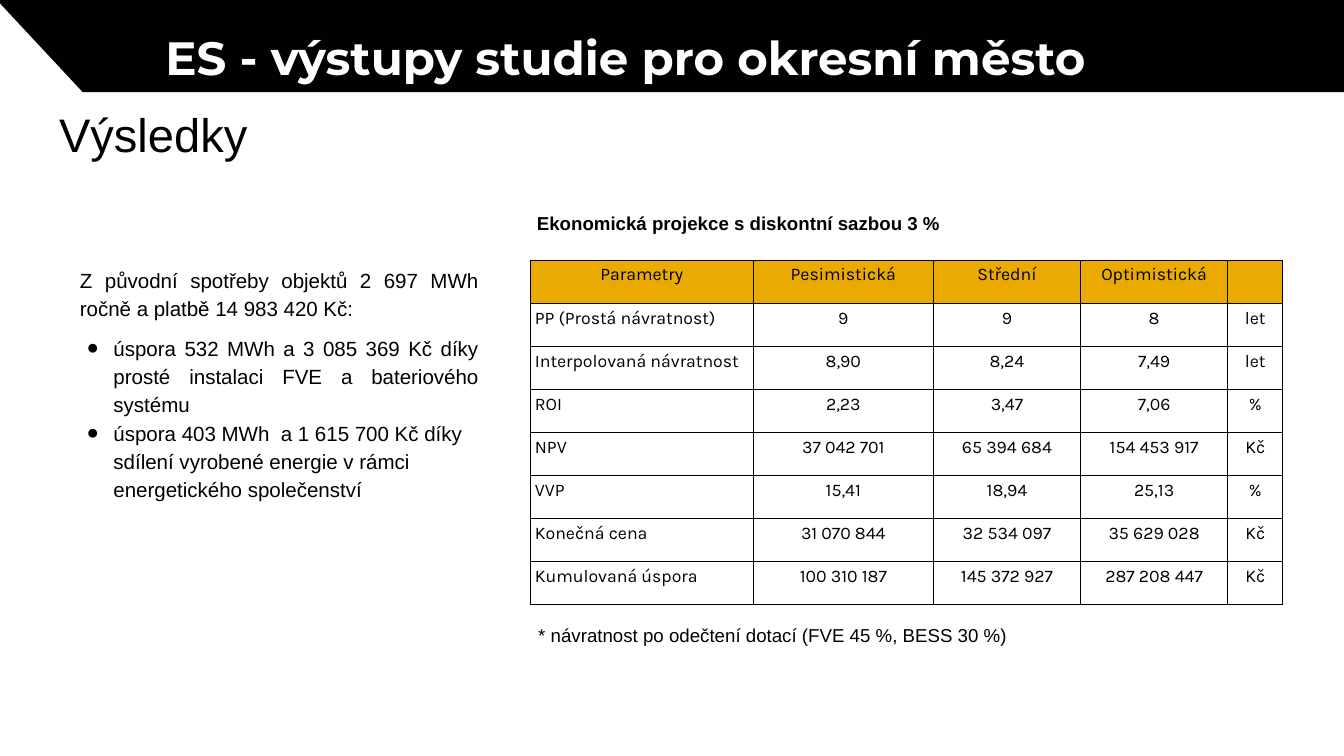
from lxml import etree
from pptx import Presentation
from pptx.dml.color import RGBColor
from pptx.enum.text import MSO_ANCHOR, MSO_AUTO_SIZE, PP_ALIGN
from pptx.oxml.ns import qn
from pptx.util import Inches, Pt

LEFT, CENTER, JUSTIFY = PP_ALIGN.LEFT, PP_ALIGN.CENTER, PP_ALIGN.JUSTIFY
TOP, MIDDLE = MSO_ANCHOR.TOP, MSO_ANCHOR.MIDDLE
NO_AUTOFIT = MSO_AUTO_SIZE.NONE
TITLE_ONLY = 5

COLORS = {"text": "000000", "banner": "010101", "light": "FFFFFF", "header": "EAAA01"}

BANNER_POINTS = [(-0.98, -1), (1.23, 1.37), (21.41, 1.37), (19.21, -1)]
COLUMN_WIDTHS = [3.32, 2.68, 2.19, 2.19, 0.82]
HEADER_HEIGHT, ROW_HEIGHT = 0.65, 0.64
PROJECTION = [
    ["Parametry", "Pesimistická", "Střední", "Optimistická", ""],
    ["PP (Prostá návratnost)", "9", "9", "8", "let"],
    ["Interpolovaná návratnost", "8,90", "8,24", "7,49", "let"],
    ["ROI", "2,23", "3,47", "7,06", "%"],
    ["NPV", "37 042 701", "65 394 684", "154 453 917", "Kč"],
    ["VVP", "15,41", "18,94", "25,13", "%"],
    ["Konečná cena", "31 070 844", "32 534 097", "35 629 028", "Kč"],
    ["Kumulovaná úspora", "100 310 187", "145 372 927", "287 208 447", "Kč"],
]
INTRO = "Z původní spotřeby objektů 2 697 MWh ročně a platbě 14 983 420 Kč:"
SOLAR_SAVING = "úspora 532 MWh a 3 085 369 Kč díky prosté instalaci FVE a bateriového systému"
SHARING_SAVING = ("úspora 403 MWh  a 1 615 700 Kč díky sdílení vyrobené energie "
                  "v rámci energetického společenství")


def apply(target, formats):
    for name, value in formats.items():
        setattr(target, name, value)


class SlideBuilder:
    def __init__(self, slide):
        self.slide = slide

    def text(self, paragraph, wording, size, font="Arial", color="text", bold=False, **formats):
        apply(paragraph, {"alignment": LEFT, **formats})
        run = paragraph.add_run()
        run.text = wording
        apply(run.font, {"size": Pt(size), "name": font, "bold": bold})
        run.font.color.rgb = RGBColor.from_string(COLORS[color])

    def frame(self, holder, inset, anchor=TOP):
        frame = holder.text_frame
        margin = Inches(inset)
        apply(frame, {"word_wrap": True, "auto_size": NO_AUTOFIT, "vertical_anchor": anchor,
                      "margin_left": margin, "margin_right": margin,
                      "margin_top": margin, "margin_bottom": margin})
        return frame

    def title(self, box, wording):
        heading = self.slide.shapes.title
        apply(heading, dict(zip(("left", "top", "width", "height"), map(Inches, box))))
        self.text(self.frame(heading, 0.2).paragraphs[0], wording, 50.4)

    def text_box(self, box, inset, anchor=TOP):
        return self.frame(self.slide.shapes.add_textbox(*map(Inches, box)), inset, anchor)

    def bullet(self, paragraph):
        properties = paragraph._p.get_or_add_pPr()
        properties.set("marL", str(Inches(0.5)))
        properties.set("indent", str(Inches(-0.4)))
        bullet_color = etree.SubElement(properties, qn("a:buClr"))
        etree.SubElement(bullet_color, qn("a:srgbClr"), val=COLORS["text"])
        etree.SubElement(properties, qn("a:buFont"), typeface="Arial")
        etree.SubElement(properties, qn("a:buChar"), char="●")

    def polygon(self, points, color):
        start, *rest = [(Inches(x), Inches(y)) for x, y in points]
        builder = self.slide.shapes.build_freeform(*start)
        builder.add_line_segments(rest, close=True)
        polygon = builder.convert_to_shape()
        polygon.shadow.inherit = False
        polygon.fill.solid()
        polygon.fill.fore_color.rgb = RGBColor.from_string(COLORS[color])
        polygon.line.fill.background()

    def borders(self, cell):
        properties = cell._tc.get_or_add_tcPr()
        for side in ("a:lnL", "a:lnR", "a:lnT", "a:lnB"):
            line = etree.SubElement(properties, qn(side), w=str(Pt(1)))
            fill = etree.SubElement(line, qn("a:solidFill"))
            etree.SubElement(fill, qn("a:srgbClr"), val=COLORS["text"])

    def table(self, left, top, rows, widths):
        height = HEADER_HEIGHT + ROW_HEIGHT * (len(rows) - 1)
        table = self.slide.shapes.add_table(
            len(rows), len(widths), Inches(left), Inches(top),
            Inches(sum(widths)), Inches(height)).table
        apply(table, {"first_row": False, "horz_banding": False})
        for column, width in zip(table.columns, widths):
            column.width = Inches(width)
        margin = Inches(0.07)
        for r, values in enumerate(rows):
            table.rows[r].height = Inches(ROW_HEIGHT if r else HEADER_HEIGHT)
            for c, value in enumerate(values):
                cell = table.cell(r, c)
                apply(cell, {"margin_left": margin, "margin_right": margin,
                             "margin_top": margin, "margin_bottom": margin})
                self.borders(cell)
                if r == 0:
                    cell.fill.solid()
                    cell.fill.fore_color.rgb = RGBColor.from_string(COLORS["header"])
                else:
                    cell.fill.background()
                if value:
                    self.text(cell.text_frame.paragraphs[0], value, 19, "Karla",
                              alignment=LEFT if r and c == 0 else CENTER)


def main():
    presentation = Presentation()
    presentation.slide_width = Inches(20)
    presentation.slide_height = Inches(11.25)
    layout = presentation.slide_layouts[TITLE_ONLY]
    builder = SlideBuilder(presentation.slides.add_slide(layout))

    footnote = builder.text_box((7.81, 9.04, 11.2, 0.84), 0.2)
    builder.text(footnote.paragraphs[0], "* návratnost po odečtení dotací (FVE 45 %, BESS 30 %)",
                 20, line_spacing=1.15)

    builder.polygon(BANNER_POINTS, "banner")
    banner = builder.text_box((2.46, 0.12, 14.86, 0.84), 0)
    builder.text(banner.paragraphs[0], "ES - výstupy studie pro okresní město", 50,
                 "Montserrat", "light", True, line_spacing=1.38)
    builder.title((0.68, 1.37, 18.64, 1.25), "Výsledky")

    builder.table(7.89, 3.87, PROJECTION, COLUMN_WIDTHS)
    caption = builder.text_box((7.89, 3.09, 8.19, 0.42), 0.1, MIDDLE)
    builder.text(caption.paragraphs[0], "Ekonomická projekce s diskontní sazbou 3 %", 20,
                 bold=True, alignment=JUSTIFY, line_spacing=1.15,
                 space_before=Pt(12), space_after=Pt(2))

    savings = builder.text_box((1.09, 3.83, 6.13, 3.72), 0.1)
    builder.text(savings.paragraphs[0], INTRO, 22, alignment=JUSTIFY,
                 line_spacing=1.15, space_before=Pt(12))
    for wording, alignment, gap in ((SOLAR_SAVING, JUSTIFY, 12), (SHARING_SAVING, LEFT, 0)):
        paragraph = savings.add_paragraph()
        builder.text(paragraph, wording, 22, alignment=alignment,
                     line_spacing=1.15, space_before=Pt(gap))
        builder.bullet(paragraph)

    presentation.save("out.pptx")


if __name__ == "__main__":
    main()
